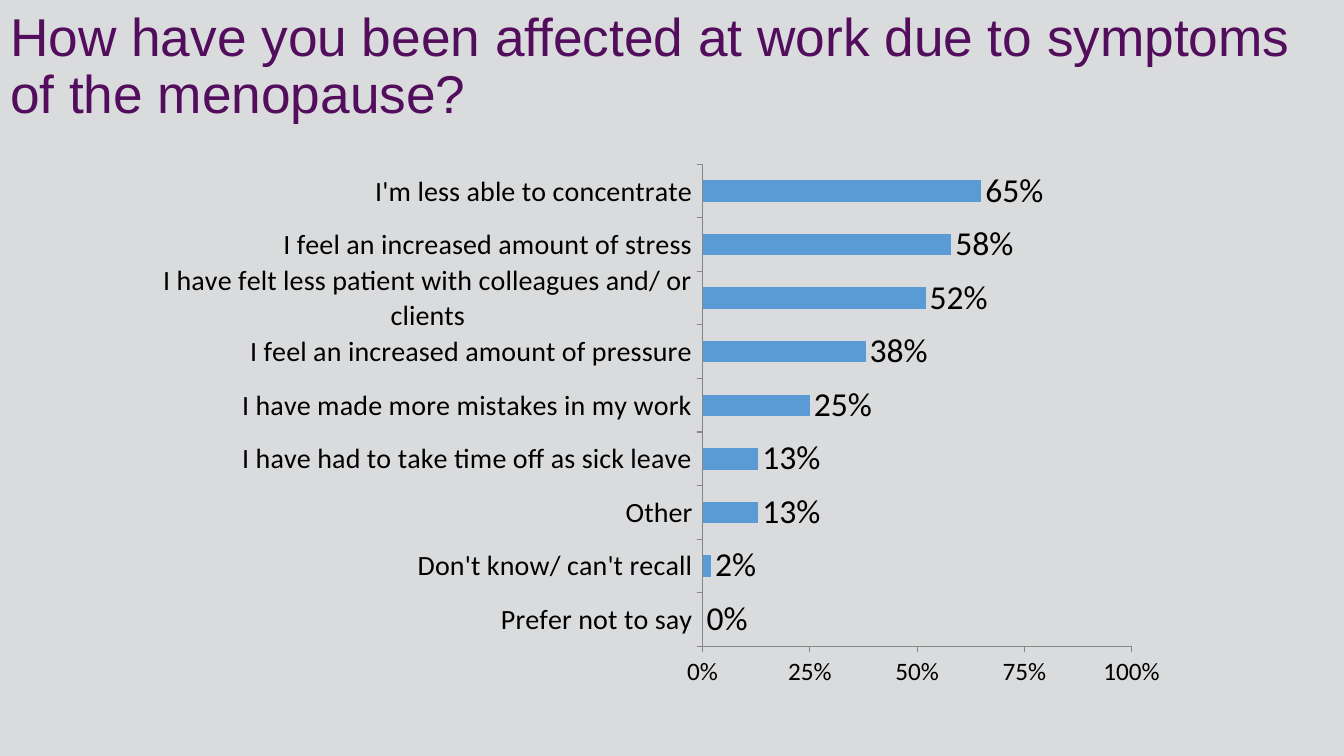
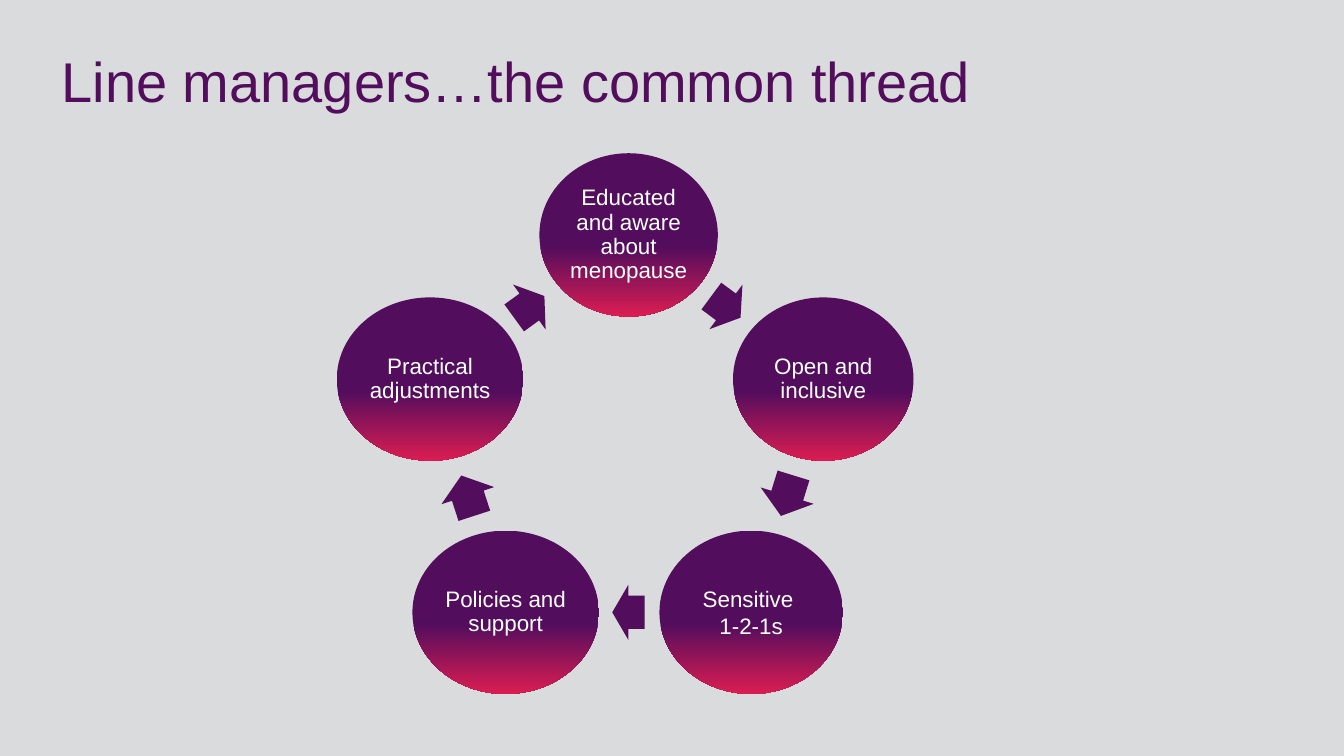
"""Build two slides on menopause at work: a survey chart and a cycle."""
import math
from lxml import etree
from pptx import Presentation
from pptx import util as u
from pptx.chart.data import CategoryChartData
from pptx.dml.color import RGBColor
from pptx.enum import chart as ch, shapes, text
from pptx.oxml.ns import qn

COLORS = {"background": "DADBDC", "purple": "520D5D", "pink": "DB1D52",
          "white": "FFFFFF", "black": "000000", "bar": "5B9BD5", "axis": "868686"}
FONT = "Arial"
CHART_FONT = "Calibri"

ANSWERS = [
    ("Prefer not to say", 0),
    ("Don't know/ can't recall", 0.02),
    ("Other", 0.13),
    ("I have had to take time off as sick leave", 0.13),
    ("I have made more mistakes in my work", 0.25),
    ("I feel an increased amount of pressure", 0.38),
    ("I have felt less patient with colleagues and/ or clients", 0.52),
    ("I feel an increased amount of stress", 0.58),
    ("I'm less able to concentrate", 0.65),
]
PLOT_LAYOUT = [("layoutTarget", "inner"), ("xMode", "edge"), ("yMode", "edge"),
               ("x", "0.526"), ("y", "0.034"), ("w", "0.37"), ("h", "0.897")]

# label, left, width, line spacing, length of the arrow that follows
STEPS = [
    ("Educated and aware about menopause", 5.35, 1.77, 0.9, 0.36),
    ("Open and inclusive", 7.27, 1.79, 0.9, 0.42),
    ("Sensitive \n1-2-1s", 6.54, 1.82, 1.0, 0.32),
    ("Policies and support", 4.09, 1.85, 0.9, 0.42),
    ("Practical adjustments", 3.34, 1.85, 0.9, 0.37),
]
RING_Y, RING_RADIUS = 4.4, 2.07
STEP_HEIGHT, ARROW_HEIGHT = 1.62, 0.55


def rgb(name):
    """Return the named colour."""
    return RGBColor.from_string(COLORS[name])


def style_font(font, size, color, name=FONT):
    """Set size, colour and typeface of a font."""
    font.size, font.name = u.Pt(size), name
    font.color.rgb = rgb(color)


def style_text(tf, size, color, align, spacing):
    """Format all paragraphs of a vertically centred text frame."""
    tf.word_wrap = True
    tf.auto_size = text.MSO_AUTO_SIZE.NONE
    tf.vertical_anchor = text.MSO_ANCHOR.MIDDLE
    for p in tf.paragraphs:
        p.alignment, p.line_spacing = align, spacing
        for r in p.runs:
            style_font(r.font, size, color)


def add_slide(prs, title, size, left, width, height):
    """Add a slide with a formatted title."""
    s = prs.slides.add_slide(prs.slide_layouts.get_by_name("Title Only"))
    sp = s.shapes.title
    sp.left, sp.top = u.Inches(left), u.Inches(0)
    sp.width, sp.height = u.Inches(width), u.Inches(height)
    sp.text_frame.text = title
    style_text(sp.text_frame, size, "purple", text.PP_ALIGN.LEFT, 0.9)
    return s


def set_plot_layout(chart):
    """Fix the inner plot area within the chart."""
    area = chart.element.find(".//" + qn("c:plotArea"))
    for old in area.findall(qn("c:layout")):
        area.remove(old)
    layout = etree.Element(qn("c:layout"))
    area.insert(0, layout)
    manual = etree.SubElement(layout, qn("c:manualLayout"))
    for tag, value in PLOT_LAYOUT:
        etree.SubElement(manual, qn("c:" + tag)).set("val", value)


def style_axis(axis, size):
    """Format an axis with outside ticks, low labels and no gridlines."""
    axis.has_major_gridlines = False
    axis.major_tick_mark = ch.XL_TICK_MARK.OUTSIDE
    axis.minor_tick_mark = ch.XL_TICK_MARK.NONE
    axis.tick_label_position = ch.XL_TICK_LABEL_POSITION.LOW
    axis.format.line.color.rgb = rgb("axis")
    axis.format.line.width = u.Pt(0.75)
    style_font(axis.tick_labels.font, size, "black", CHART_FONT)


def add_survey_chart(s):
    """Add the bar chart of survey answers."""
    data = CategoryChartData(number_format="0%")
    data.categories = [label for label, _ in ANSWERS]
    data.add_series("Series 1", [share for _, share in ANSWERS])
    chart = s.shapes.add_chart(
        ch.XL_CHART_TYPE.BAR_CLUSTERED, u.Inches(0.92), u.Inches(1.45),
        u.Inches(11.5), u.Inches(5.36), data).chart
    chart.has_legend = chart.has_title = False
    style_font(chart.font, 28, "black", CHART_FONT)
    set_plot_layout(chart)
    style_axis(chart.category_axis, 20)
    axis = chart.value_axis
    style_axis(axis, 18)
    axis.minimum_scale, axis.maximum_scale, axis.major_unit = 0, 1, 0.25
    axis.tick_labels.number_format = "0%"
    axis.tick_labels.number_format_is_linked = False
    plot = chart.plots[0]
    plot.gap_width, plot.overlap, plot.vary_by_categories = 150, -10, False
    fill = plot.series[0].format.fill
    fill.solid()
    fill.fore_color.rgb = rgb("bar")
    plot.has_data_labels = True
    labels = plot.data_labels
    labels.show_value = True
    labels.position = ch.XL_LABEL_POSITION.OUTSIDE_END
    labels.number_format, labels.number_format_is_linked = "0%", False
    style_font(labels.font, 24, "black", CHART_FONT)


def add_centred_shape(s, kind, center, width, height):
    """Add a plain shape around a centre point."""
    x, y = center
    sp = s.shapes.add_shape(kind, u.Inches(x - width / 2), u.Inches(y - height / 2),
                            u.Inches(width), u.Inches(height))
    sp.shadow.inherit = False
    sp.line.fill.background()
    return sp


def add_step(s, label, center, width, spacing):
    """Add a gradient ellipse with its label."""
    sp = add_centred_shape(s, shapes.MSO_SHAPE.OVAL, center, width, STEP_HEIGHT)
    sp.fill.gradient()
    sp.fill.gradient_angle = 270
    stops = [(0.57, "purple"), (1, "pink")]
    for stop, (position, color) in zip(sp.fill.gradient_stops, stops):
        stop.position, stop.color.rgb = position, rgb(color)
    tf = sp.text_frame
    tf.margin_left = tf.margin_right = tf.margin_top = tf.margin_bottom = u.Inches(0.02)
    tf.text = label
    style_text(tf, 16, "white", text.PP_ALIGN.CENTER, spacing)


def add_arrow(s, start, end, length):
    """Add a block arrow halfway between two centres."""
    (x1, y1), (x2, y2) = start, end
    sp = add_centred_shape(s, shapes.MSO_SHAPE.RIGHT_ARROW,
                           ((x1 + x2) / 2, (y1 + y2) / 2), length, ARROW_HEIGHT)
    sp.adjustments[0], sp.adjustments[1] = 0.6, 0.5
    sp.rotation = math.degrees(math.atan2(y2 - y1, x2 - x1))
    sp.fill.solid()
    sp.fill.fore_color.rgb = rgb("purple")


def add_cycle(s):
    """Add the ring of steps joined by arrows."""
    turn = 2 * math.pi / len(STEPS)
    centers = [(left + width / 2, RING_Y - RING_RADIUS * math.cos(i * turn))
               for i, (_, left, width, _, _) in enumerate(STEPS)]
    following = centers[1:] + centers[:1]
    for step, center, after in zip(STEPS, centers, following):
        label, _, width, spacing, length = step
        add_step(s, label, center, width, spacing)
        add_arrow(s, center, after, length)


def main():
    """Build and save the presentation."""
    prs = Presentation()
    prs.slide_width, prs.slide_height = u.Inches(13.33), u.Inches(7.5)
    fill = prs.slide_master.background.fill
    fill.solid()
    fill.fore_color.rgb = rgb("background")
    add_survey_chart(add_slide(
        prs, "How have you been affected at work due to symptoms of the menopause?",
        38, 0, 13.14, 1.35))
    add_cycle(add_slide(prs, "Line managers…the common thread", 40, 0.51, 11.55, 1.68))
    prs.save("out.pptx")


if __name__ == "__main__":
    main()
